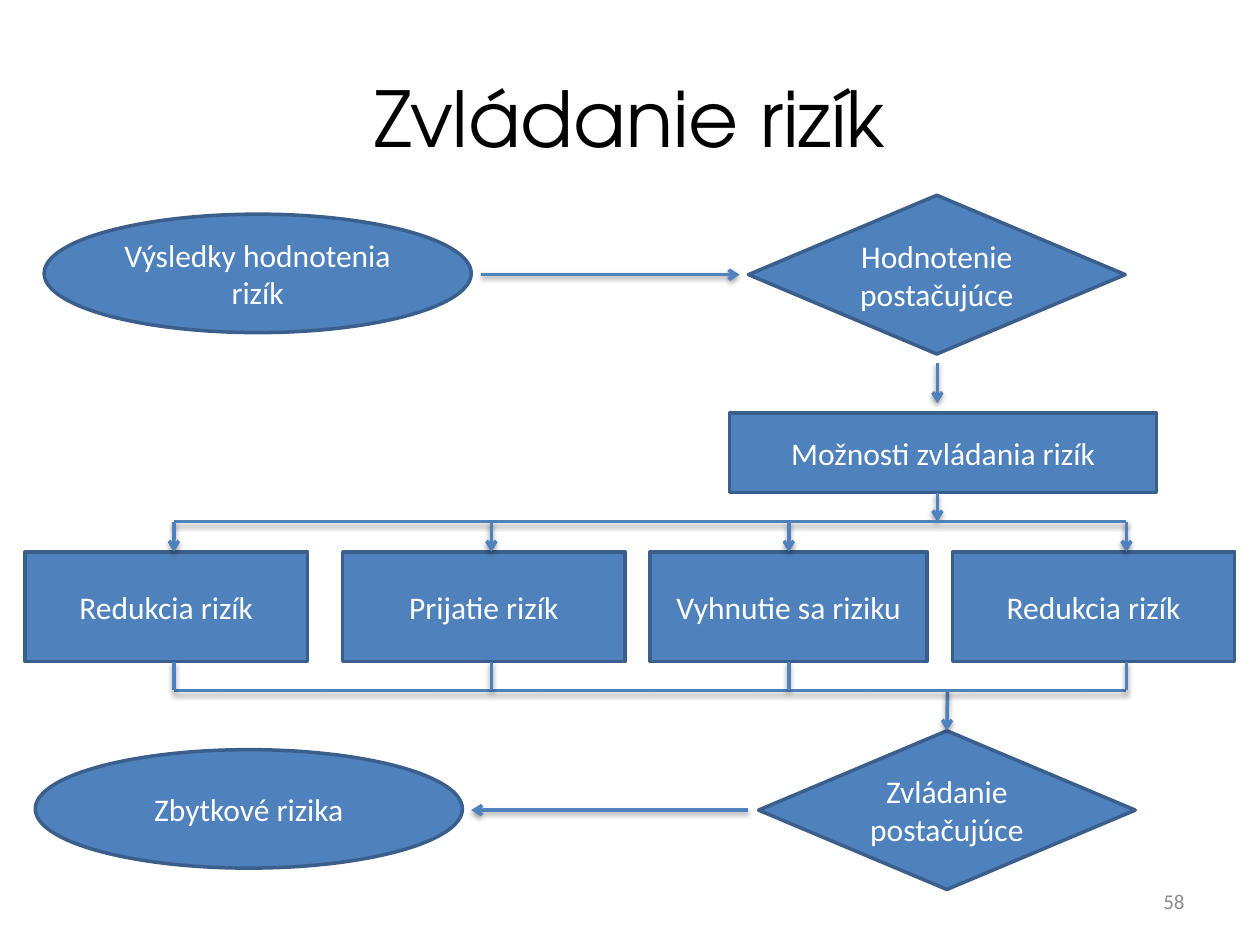
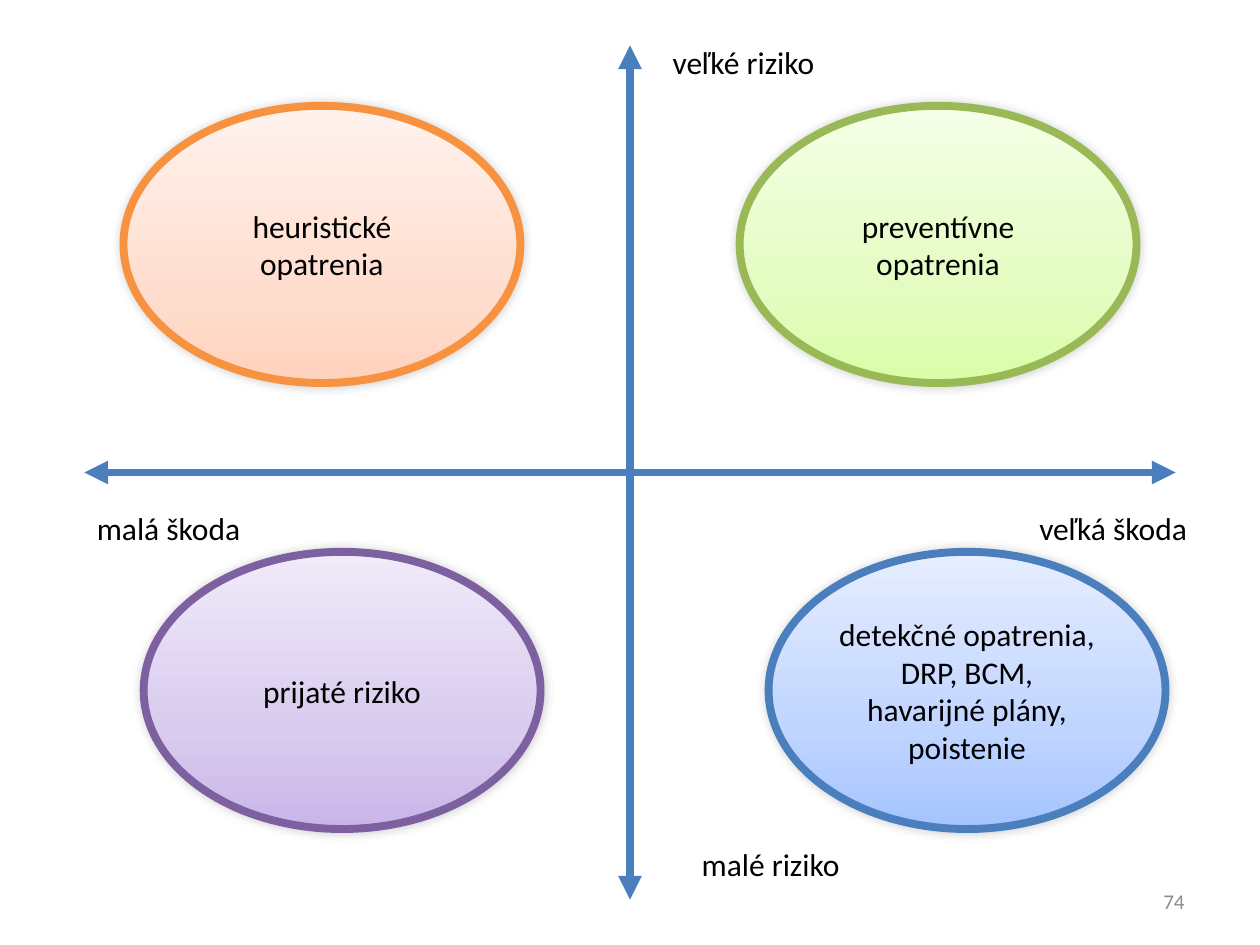
from copy import deepcopy

from pptx import Presentation
from pptx import util as u
from pptx.dml.color import RGBColor
from pptx.enum import shapes, text
from pptx.oxml import parse_xml
from pptx.oxml.ns import nsdecls, qn

COLORS = {
    "box": "4F81BD", "box edge": "3A5F8C", "axis": "4B7EBC",
    "white": "FFFFFF", "black": "000000", "page number": "8C8C8C",
}
BODY_FONT, TITLE_FONT = "Calibri", "TeX Gyre Adventor"
SHAPE, ALIGN, ANCHOR = shapes.MSO_SHAPE, text.PP_ALIGN, text.MSO_ANCHOR

# Shadow distances are in EMU, angles in 60000ths of a degree
SHADOW = (
    f'<a:effectLst {nsdecls("a")}><a:outerShdw blurRad="{{}}" dist="{{}}" dir="{{}}" rotWithShape="0">'
    '<a:srgbClr val="000000"><a:alpha val="{}"/></a:srgbClr></a:outerShdw></a:effectLst>'
)
LINE_SHADOW = SHADOW.format(u.Pt(3.1), u.Pt(1.6), 90 * 60000, 38000)
ELLIPSE_SHADOW = SHADOW.format(u.Pt(6), 0, 315 * 60000, 20000)
NO_SHADOW = f'<a:effectLst {nsdecls("a")}/>'


def write_text(shape, wording, color, size=18, align=ALIGN.CENTER, anchor=ANCHOR.MIDDLE, font=BODY_FONT):
    frame = shape.text_frame
    frame.text = wording
    frame.word_wrap = True
    frame.vertical_anchor = anchor
    paragraph = frame.paragraphs[0]
    paragraph.alignment = align
    paragraph.font.name = font
    paragraph.font.size = u.Pt(size)
    paragraph.font.color.rgb = RGBColor.from_string(COLORS[color])


def add_line(slide, start, end, color="box", width=2, head=None, tail=None, shadow=LINE_SHADOW):
    points = [u.Inches(value) for value in (*start, *end)]
    connector = slide.shapes.add_connector(shapes.MSO_CONNECTOR.STRAIGHT, *points)
    connector.line.color.rgb = RGBColor.from_string(COLORS[color])
    connector.line.width = u.Pt(width)
    properties = connector._element.spPr
    for tag, kind in (("headEnd", head), ("tailEnd", tail)):
        if kind:
            properties.find(qn("a:ln")).append(parse_xml(f'<a:{tag} {nsdecls("a")} type="{kind}"/>'))
    properties.append(parse_xml(shadow))
    return connector


presentation = Presentation()
presentation.slide_width, presentation.slide_height = u.Inches(10), u.Inches(7.5)
treatment_slide = presentation.slides.add_slide(presentation.slide_layouts[5])
quadrant_slide = presentation.slides.add_slide(presentation.slide_layouts[6])

# Page numbers
for slide, number in ((treatment_slide, "58"), (quadrant_slide, "74")):
    box = slide.shapes.add_textbox(u.Inches(7.17), u.Inches(6.95), u.Inches(2.33), u.Inches(0.4))
    write_text(box, number, "page number", 12, ALIGN.RIGHT)

# Slide 1: title
title = treatment_slide.shapes.title
title.left, title.top, title.width, title.height = map(u.Inches, (0.5, 0.3, 9, 1.25))
write_text(title, "Zvládanie rizík", "black", 44, font=TITLE_FONT)

# Slide 1: flowchart steps
OPTION_TOP, OPTION_HEIGHT = 4.38, 0.87
steps = [
    (SHAPE.OVAL, 0.35, 1.7, 3.39, 0.94, "Výsledky hodnotenia rizík"),
    (SHAPE.DIAMOND, 5.94, 1.55, 2.99, 1.26, "Hodnotenie postačujúce"),
    (SHAPE.RECTANGLE, 5.79, 3.28, 3.39, 0.63, "Možnosti zvládania rizík"),
]
for left, width, wording in (
    (0.2, 2.24, "Redukcia rizík"),
    (2.72, 2.24, "Prijatie rizík"),
    (5.16, 2.2, "Vyhnutie sa riziku"),
    (7.56, 2.24, "Redukcia rizík"),
):
    steps.append((SHAPE.RECTANGLE, left, OPTION_TOP, width, OPTION_HEIGHT, wording))
steps += [
    (SHAPE.OVAL, 0.28, 5.95, 3.39, 0.94, "Zbytkové rizika"),
    (SHAPE.DIAMOND, 6.02, 5.8, 2.99, 1.26, "Zvládanie postačujúce"),
]
step_shapes = {}
for kind, left, top, width, height, wording in steps:
    shape = treatment_slide.shapes.add_shape(kind, *map(u.Inches, (left, top, width, height)))
    shape.shadow.inherit = False
    shape.fill.solid()
    shape.fill.fore_color.rgb = RGBColor.from_string(COLORS["box"])
    shape.line.color.rgb = RGBColor.from_string(COLORS["box edge"])
    shape.line.width = u.Pt(2)
    write_text(shape, wording, "white")
    step_shapes[wording] = shape

# Slide 1: arrows between the steps
SPLIT_Y, MERGE_Y = 4.14, 5.48
for start, end in (
    ((3.82, 2.18), (5.87, 2.18)),
    ((7.44, 2.88), (7.44, 3.2)),
    ((7.44, 3.91), (7.44, SPLIT_Y)),
    ((5.94, 6.43), (3.74, 6.43)),
):
    add_line(treatment_slide, start, end, tail="arrow")
to_decision = add_line(treatment_slide, (7.52, MERGE_Y), (7.52, 5.8), tail="arrow")
to_decision.end_connect(step_shapes["Zvládanie postačujúce"], 0)

# Slide 1: split into the four options and merge again
branches = (8.94, 6.26, 3.9, 1.38)
for y in (SPLIT_Y, MERGE_Y):
    add_line(treatment_slide, (branches[0], y), (branches[-1], y))
for x in branches:
    into = add_line(treatment_slide, (x, SPLIT_Y), (x, OPTION_TOP), tail="arrow")
    out = add_line(treatment_slide, (x, MERGE_Y), (x, OPTION_TOP + OPTION_HEIGHT))
    if x == 6.26:
        into.end_connect(step_shapes["Vyhnutie sa riziku"], 0)
        out.end_connect(step_shapes["Vyhnutie sa riziku"], 2)

# Slide 2: risk and damage axes
for start, end in (((5, 0.36), (5, 7.14)), ((0.67, 3.75), (9.33, 3.75))):
    add_line(quadrant_slide, start, end, "axis", 4.5, "triangle", "triangle", NO_SHADOW)

# Slide 2: axis labels
for left, top, width, wording in (
    (5.24, 0.29, 1.65, "veľké riziko"),
    (5.47, 6.66, 1.65, "malé riziko"),
    (0.67, 3.99, 2.13, "malá škoda"),
    (8.15, 3.99, 1.65, "veľká škoda"),
):
    label = quadrant_slide.shapes.add_textbox(*map(u.Inches, (left, top, width, 0.4)))
    write_text(label, wording, "black", align=ALIGN.LEFT, anchor=ANCHOR.TOP)
    label.text_frame.auto_size = text.MSO_AUTO_SIZE.SHAPE_TO_FIT_TEXT

# Slide 2: measures in each quadrant, shaded from bottom to top
for left, top, edge, shades, wording in (
    (0.98, 0.84, "F69240", ("FFD2BD", "FFDED0", "FFF2ED"), "heuristické opatrenia"),
    (5.87, 0.84, "98B955", ("DAFDA7", "E4FCC2", "F5FFE7"), "preventívne opatrenia"),
    (1.14, 4.38, "7D60A0", ("C9B5E8", "D8CBEE", "F0EAF9"), "prijaté riziko"),
    (6.1, 4.38, COLORS["axis"], ("A4C4FF", "BFD4FF", "E6EEFF"),
     "detekčné opatrenia, DRP, BCM, havarijné plány, poistenie"),
):
    ellipse = quadrant_slide.shapes.add_shape(SHAPE.OVAL, *map(u.Inches, (left, top, 3.15, 2.2)))
    ellipse.fill.gradient()
    ellipse.fill.gradient_angle = 90
    properties = ellipse._element.spPr
    stop_list = properties.find(".//" + qn("a:gsLst"))
    stop_list.append(deepcopy(stop_list[0]))
    for stop, position, shade in zip(ellipse.fill.gradient_stops, (0, 0.35, 1), shades):
        stop.position = position
        stop.color.rgb = RGBColor.from_string(shade)
    ellipse.line.color.rgb = RGBColor.from_string(edge)
    ellipse.line.width = u.Pt(4.5)
    properties.append(parse_xml(ELLIPSE_SHADOW))
    write_text(ellipse, wording, "black")

presentation.save("out.pptx")
